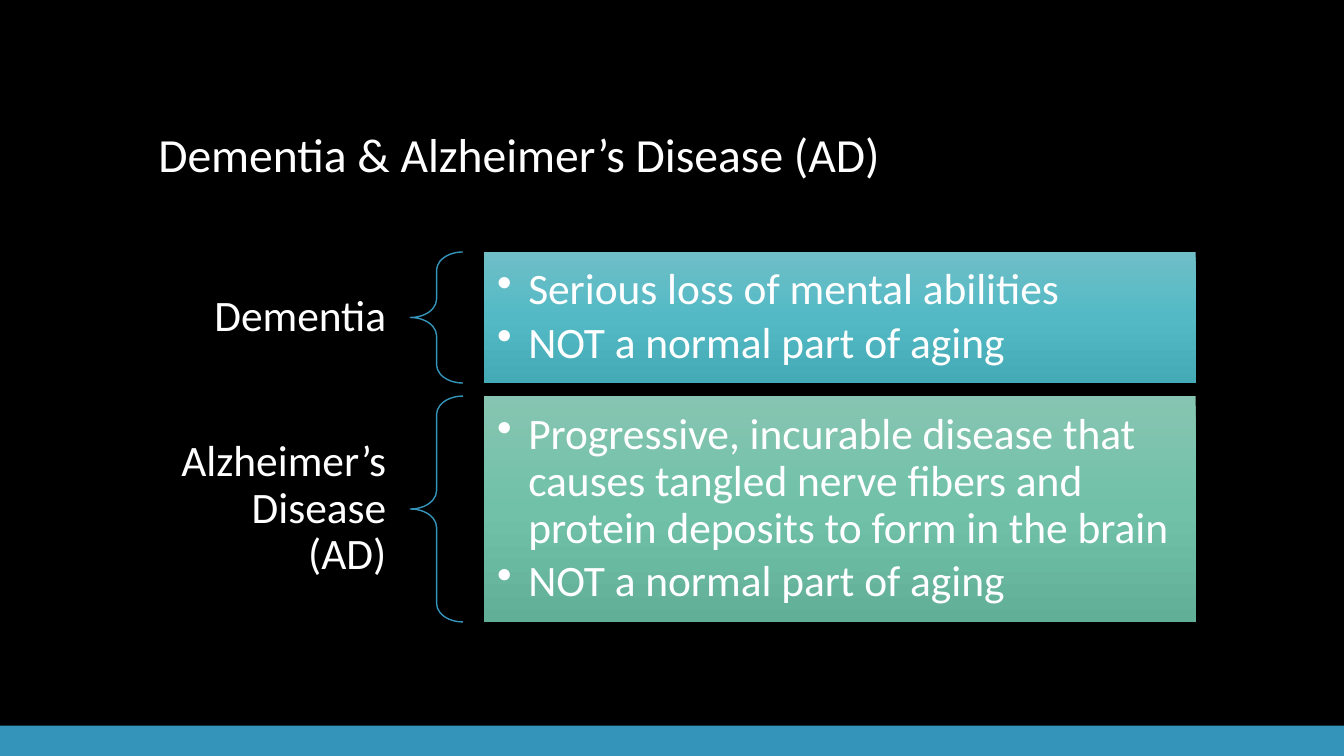
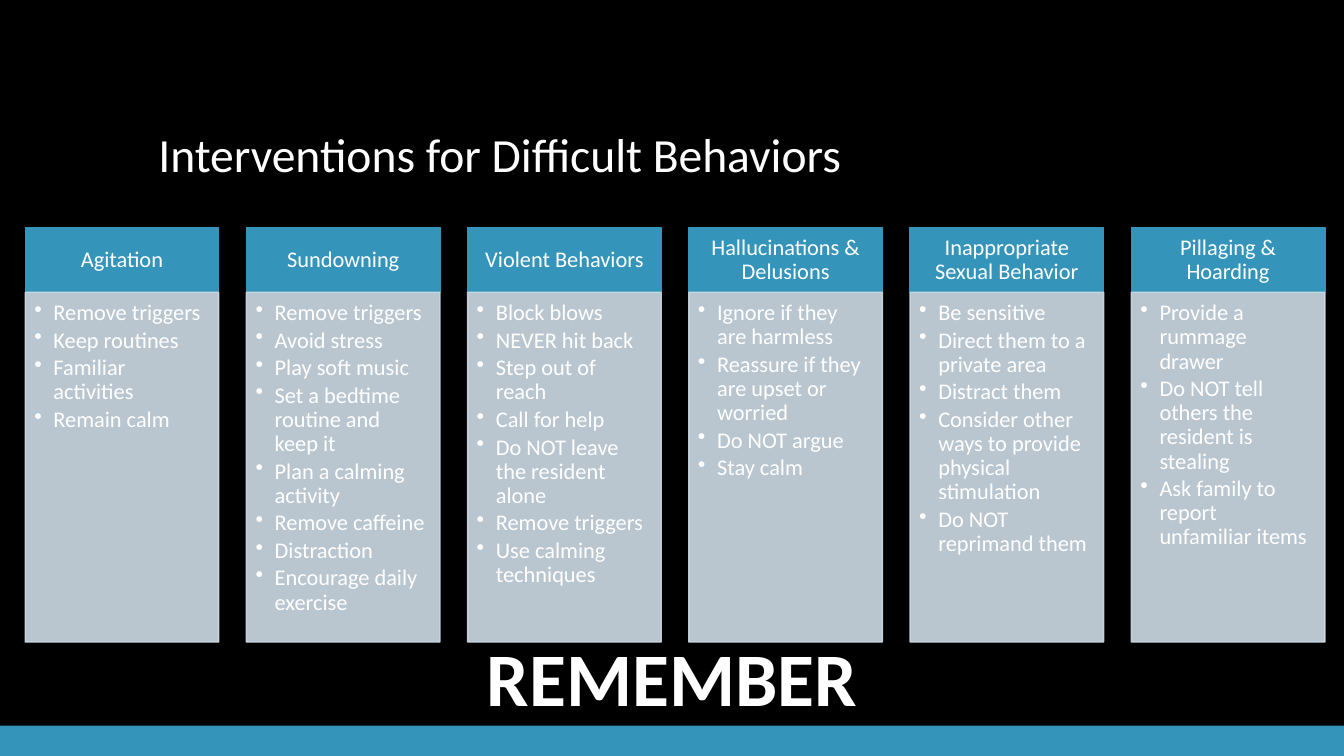
import copy
from dataclasses import dataclass

import pptx
import pptx.dml.color
import pptx.enum.shapes
import pptx.enum.text
import pptx.oxml.ns
import pptx.util
from lxml import etree

ALIGN = pptx.enum.text.PP_ALIGN
ANCHOR = pptx.enum.text.MSO_ANCHOR
SHAPE = pptx.enum.shapes.MSO_SHAPE
qn = pptx.oxml.ns.qn


@dataclass(frozen=True)
class Theme:
    font: str = "Calibri"
    background: str = "000000"
    text: str = "FFFFFF"
    accent: str = "3494BA"
    panel: str = "CEDCE7"
    panel_opacity: int = 90
    title_size: int = 34
    definition_size: int = 31
    behavior_size: int = 16
    reminder_size: int = 54
    line_spacing: float = 0.9
    bullet_gap: float = 0.15


THEME = Theme()
EMU_PER_PX = 9144  # 100 px to the inch
SLIDE_SIZE = (1333, 750)
BAND = (0, 720, 1333, 30)
TITLE = (147, 51, 1040, 135)

DEFINITIONS_TITLE = "Dementia & Alzheimer’s Disease (AD)"
# label, points, height, gradient from top to bottom
DEFINITIONS = [
    ("Dementia",
     ["Serious loss of mental abilities", "NOT a normal part of aging"],
     130, ("6FBEC7", "53BAC5", "44AAB5")),
    ("Alzheimer’s Disease (AD)",
     ["Progressive, incurable disease that causes tangled nerve fibers "
      "and protein deposits to form in the brain",
      "NOT a normal part of aging"],
     224, ("86C5B1", "71C1A8", "61AF97")),
]

BEHAVIORS_TITLE = "Interventions for Difficult Behaviors"
BEHAVIORS = {
    "Agitation": [
        "Remove triggers", "Keep routines", "Familiar activities", "Remain calm"],
    "Sundowning": [
        "Remove triggers", "Avoid stress", "Play soft music",
        "Set a bedtime routine and keep it", "Plan a calming activity",
        "Remove caffeine", "Distraction", "Encourage daily exercise"],
    "Violent Behaviors": [
        "Block blows", "NEVER hit back", "Step out of reach", "Call for help",
        "Do NOT leave the resident alone", "Remove triggers",
        "Use calming techniques"],
    "Hallucinations & Delusions": [
        "Ignore if they are harmless", "Reassure if they are upset or worried",
        "Do NOT argue", "Stay calm"],
    "Inappropriate Sexual Behavior": [
        "Be sensitive", "Direct them to a private area", "Distract them",
        "Consider other ways to provide physical stimulation",
        "Do NOT reprimand them"],
    "Pillaging & Hoarding": [
        "Provide a rummage drawer",
        "Do NOT tell others the resident is stealing",
        "Ask family to report unfamiliar items"],
}
REMINDER = "REMEMBER"


def px(*lengths):
    return [pptx.util.Emu(round(length * EMU_PER_PX)) for length in lengths]


def rgb(color):
    return pptx.dml.color.RGBColor.from_string(color)


def add_bullet(paragraph, indent):
    properties = paragraph._p.get_or_add_pPr()
    hang, = px(indent)
    properties.set("marL", str(hang))
    properties.set("indent", str(-hang))
    etree.SubElement(properties, qn("a:buChar"), char="•")


def write(frame, lines, size, align=ALIGN.LEFT, anchor=ANCHOR.MIDDLE,
          insets=(10, 5, 10, 5), indent=0, bold=False, wrap=True):
    """Fill a text frame, one paragraph a line; an indent makes them bullets."""
    frame.word_wrap = wrap
    frame.vertical_anchor = anchor
    (frame.margin_left, frame.margin_top,
     frame.margin_right, frame.margin_bottom) = px(*insets)
    for index, line in enumerate(lines):
        paragraph = frame.add_paragraph() if index else frame.paragraphs[0]
        paragraph.alignment = align
        paragraph.line_spacing = THEME.line_spacing
        if indent:
            paragraph.space_after = pptx.util.Pt(size * THEME.bullet_gap)
            add_bullet(paragraph, indent)
        run = paragraph.add_run()
        run.text = line
        run.font.name = THEME.font
        run.font.size = pptx.util.Pt(size)
        run.font.bold = bold
        run.font.color.rgb = rgb(THEME.text)


def add_shape(slide, preset, box, fill=None, line=None):
    shape = slide.shapes.add_shape(preset, *px(*box))
    shape.shadow.inherit = False
    if fill:
        shape.fill.solid()
        shape.fill.fore_color.rgb = rgb(fill)
    else:
        shape.fill.background()
    if line:
        shape.line.color.rgb = rgb(line)
        shape.line.width = pptx.util.Pt(1)
    else:
        shape.line.fill.background()
    return shape


def shade(shape, colors):
    """Fill a shape with evenly spaced colors from top to bottom."""
    shape.fill.gradient()
    shape.fill.gradient_angle = 270
    stops = shape.element.find(".//" + qn("a:gsLst"))
    while len(stops) < len(colors):
        stops.append(copy.deepcopy(stops[-1]))
    for index, stop in enumerate(shape.fill.gradient_stops):
        stop.position = index / (len(colors) - 1)
        stop.color.rgb = rgb(colors[index])


def make_translucent(shape, percent):
    for color in shape.element.spPr.iter(qn("a:srgbClr")):
        etree.SubElement(color, qn("a:alpha"), val=str(percent * 1000))


def prepare_layout(deck):
    """Give the title-only layout the background, title place and bottom band."""
    layout = deck.slide_layouts.get_by_name("Title Only")
    layout.background.fill.solid()
    layout.background.fill.fore_color.rgb = rgb(THEME.background)
    title = layout.placeholders[0]
    title.left, title.top, title.width, title.height = px(*TITLE)
    return layout


def add_titled_slide(deck, layout, title):
    slide = deck.slides.add_slide(layout)
    if len(deck.slides) == 1:
        band = add_shape(slide, SHAPE.RECTANGLE, BAND, THEME.accent)
        layout.shapes.element.append(band.element)
    write(slide.shapes.title.text_frame, [title], THEME.title_size,
          anchor=ANCHOR.BOTTOM)
    return slide


def add_definitions(slide):
    top, gap = 250, 13
    for label, points, height, colors in DEFINITIONS:
        term = slide.shapes.add_textbox(*px(147, top, 260, height))
        write(term.text_frame, [label], THEME.definition_size, ALIGN.RIGHT,
              insets=(24, 9, 24, 9))
        brace = add_shape(slide, SHAPE.LEFT_BRACE, (407, top, 52, height),
                          line=THEME.accent)
        brace.adjustments[0] = 0.35
        panel = add_shape(slide, SHAPE.RECTANGLE, (480, top, 706, height))
        shade(panel, colors)
        write(panel.text_frame, points, THEME.definition_size,
              insets=(13, 13, 13, 13), indent=31)
        top += height + gap


def add_behaviors(slide):
    left, right, width = 25, 1314, 192
    top, heading_height, panel_height = 226, 64, 347
    pitch = (right - left - width) / (len(BEHAVIORS) - 1)
    for column, (behavior, interventions) in enumerate(BEHAVIORS.items()):
        x = left + column * pitch
        heading = add_shape(slide, SHAPE.RECTANGLE,
                            (x, top, width, heading_height),
                            THEME.accent, THEME.accent)
        write(heading.text_frame, [behavior], THEME.behavior_size,
              ALIGN.CENTER, insets=(12, 7, 12, 7))
        panel = add_shape(slide, SHAPE.RECTANGLE,
                          (x, top + heading_height, width, panel_height),
                          THEME.panel, THEME.panel)
        make_translucent(panel, THEME.panel_opacity)
        write(panel.text_frame, interventions, THEME.behavior_size,
              anchor=ANCHOR.TOP, insets=(9, 9, 12, 14), indent=19)


def add_reminder(slide):
    reminder = slide.shapes.add_textbox(*px(471, 626, 391, 101))
    write(reminder.text_frame, [REMINDER], THEME.reminder_size, ALIGN.CENTER,
          bold=True, wrap=False)


def main():
    deck = pptx.Presentation()
    deck.slide_width, deck.slide_height = px(*SLIDE_SIZE)
    layout = prepare_layout(deck)
    add_definitions(add_titled_slide(deck, layout, DEFINITIONS_TITLE))
    behaviors = add_titled_slide(deck, layout, BEHAVIORS_TITLE)
    add_behaviors(behaviors)
    add_reminder(behaviors)
    deck.save("out.pptx")


if __name__ == "__main__":
    main()
